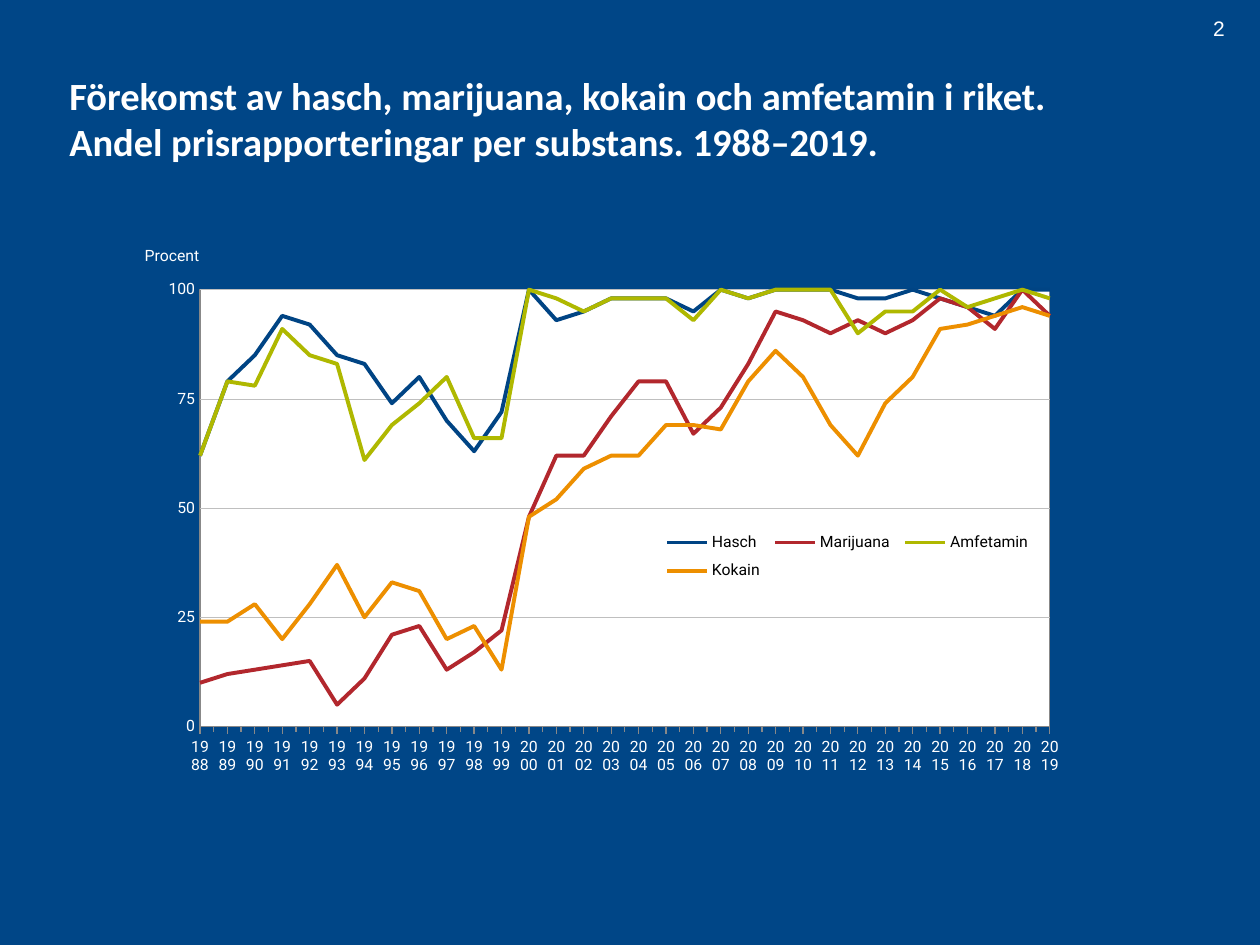
from lxml import etree
from pptx import Presentation
from pptx.chart.data import CategoryChartData
from pptx.dml.color import RGBColor
from pptx.enum.chart import XL_CHART_TYPE, XL_LEGEND_POSITION, XL_TICK_MARK
from pptx.enum.text import MSO_ANCHOR, MSO_AUTO_SIZE, PP_ALIGN
from pptx.oxml import parse_xml
from pptx.oxml.ns import nsdecls, qn
from pptx.util import Inches, Pt

LINE_CHART = XL_CHART_TYPE.LINE
LEGEND_RIGHT = XL_LEGEND_POSITION.RIGHT
TICK_OUTSIDE, TICK_NONE = XL_TICK_MARK.OUTSIDE, XL_TICK_MARK.NONE
ANCHOR_TOP, ANCHOR_MIDDLE = MSO_ANCHOR.TOP, MSO_ANCHOR.MIDDLE
ALIGN_LEFT = PP_ALIGN.LEFT
NO_AUTOSIZE = MSO_AUTO_SIZE.NONE

NAVY = RGBColor(0x00, 0x46, 0x87)
WHITE = RGBColor(0xFF, 0xFF, 0xFF)
BLACK = RGBColor(0x00, 0x00, 0x00)
AXIS_GREY = RGBColor(0x88, 0x88, 0x88)
GRID_GREY = RGBColor(0xBF, 0xBF, 0xBF)
BLUE = RGBColor(0x00, 0x44, 0x84)
RED = RGBColor(0xB2, 0x27, 0x2D)
LIME = RGBColor(0xAF, 0xB8, 0x00)
ORANGE = RGBColor(0xED, 0x8F, 0x00)

YEARS = [str(year) for year in range(1988, 2020)]
SUBSTANCES = [
    ("Hasch", BLUE, (62, 79, 85, 94, 92, 85, 83, 74, 80, 70, 63, 72, 100, 93, 95, 98,
                     98, 98, 95, 100, 98, 100, 100, 100, 98, 98, 100, 98, 96, 94, 100, 100)),
    ("Marijuana", RED, (10, 12, 13, 14, 15, 5, 11, 21, 23, 13, 17, 22, 48, 62, 62, 71,
                        79, 79, 67, 73, 83, 95, 93, 90, 93, 90, 93, 98, 96, 91, 100, 94)),
    ("Amfetamin", LIME, (62, 79, 78, 91, 85, 83, 61, 69, 74, 80, 66, 66, 100, 98, 95, 98,
                         98, 98, 93, 100, 98, 100, 100, 100, 90, 95, 95, 100, 96, 98, 100, 98)),
    ("Kokain", ORANGE, (24, 24, 28, 20, 28, 37, 25, 33, 31, 20, 23, 13, 48, 52, 59, 62,
                        62, 69, 69, 68, 79, 86, 80, 69, 62, 74, 80, 91, 92, 94, 96, 94)),
]


def format_font(font, size, color, name="Roboto", bold=False):
    font.name, font.size, font.bold = name, Pt(size), bold
    font.color.rgb = color


def write_text(frame, text, anchor=ANCHOR_TOP, **font_format):
    frame.word_wrap = True
    frame.auto_size = NO_AUTOSIZE
    frame.vertical_anchor = anchor
    paragraph = frame.paragraphs[0]
    paragraph.alignment = ALIGN_LEFT
    paragraph.text = text
    for run in paragraph.runs:
        format_font(run.font, **font_format)


def set_layout(element, position, before=None, inner=False):
    """Place a chart part by shares of the chart's size: x, y and maybe w, h."""
    for old_layout in element.findall(qn("c:layout")):
        element.remove(old_layout)
    layout = etree.Element(qn("c:layout"))
    manual = etree.SubElement(layout, qn("c:manualLayout"))
    settings = [("layoutTarget", "inner")] if inner else []
    settings += [("xMode", "edge"), ("yMode", "edge")]
    settings += zip("xywh", position)
    for tag, value in settings:
        etree.SubElement(manual, qn(f"c:{tag}")).set("val", str(value))
    following = element.find(qn(before)) if before else None
    if following is None:
        element.insert(0, layout)
    else:
        following.addprevious(layout)


class SlideBuilder:
    def __init__(self, presentation):
        self.width = presentation.slide_width
        self.height = presentation.slide_height
        self.slide = presentation.slides.add_slide(presentation.slide_layouts[5])
        self.slide.background.fill.solid()
        self.slide.background.fill.fore_color.rgb = NAVY

    def area(self, left, top, width, height):
        return (round(left * self.width), round(top * self.height),
                round(width * self.width), round(height * self.height))

    def title(self, text, *shares):
        shape = self.slide.shapes.title
        shape.left, shape.top, shape.width, shape.height = self.area(*shares)
        write_text(shape.text_frame, text, ANCHOR_MIDDLE,
                   size=22, color=WHITE, name="Calibri", bold=True)

    def label(self, text, *shares):
        shape = self.slide.shapes.add_textbox(*self.area(*shares))
        write_text(shape.text_frame, text, size=12, color=WHITE, name="Arial")

    def line_chart(self, categories, series_list, *shares):
        data = CategoryChartData(number_format="0")
        data.categories = categories
        for name, _, values in series_list:
            data.add_series(name, values)
        chart = self.slide.shapes.add_chart(LINE_CHART, *self.area(*shares), data).chart
        chart.has_title = False
        format_font(chart.font, 8, BLACK, "Arial")
        for series, (_, color, _) in zip(chart.plots[0].series, series_list):
            series.smooth = False
            line = series.format.line
            line.width = Pt(2.25)
            line.color.rgb = color
        self.style_axes(chart)
        self.style_plot_area(chart)
        self.style_legend(chart)

    def style_axes(self, chart):
        years, percent = chart.category_axis, chart.value_axis
        for axis in (years, percent):
            format_font(axis.tick_labels.font, 9, WHITE)
        years.major_tick_mark = years.minor_tick_mark = TICK_OUTSIDE
        years.format.line.color.rgb = AXIS_GREY
        years.format.line.width = Pt(0.75)
        years._element.find(qn("c:txPr")).find(qn("a:bodyPr")).set("rot", "0")

        percent.minimum_scale, percent.maximum_scale, percent.major_unit = 0, 100, 25
        percent.major_tick_mark = percent.minor_tick_mark = TICK_NONE
        percent.tick_labels.number_format = "0"
        percent.tick_labels.number_format_is_linked = False
        percent.format.line.fill.background()
        grid_line = percent.major_gridlines.format.line
        grid_line.color.rgb = GRID_GREY
        grid_line.width = Pt(0.25)

        # Horizontal axis title above the scale
        frame = percent.axis_title.text_frame
        frame.text = "Procent"
        format_font(frame.paragraphs[0].runs[0].font, 9, WHITE)
        title = percent.axis_title._element
        body = next(title.iter(qn("a:bodyPr")))
        body.set("rot", "0")
        body.set("vert", "horz")
        set_layout(title, (0.01, 0.05), before="c:overlay")

        # Lines start on the axis instead of half a category in
        crossing = percent._element.find(qn("c:crossBetween"))
        if crossing is None:
            crossing = etree.Element(qn("c:crossBetween"))
            percent._element.find(qn("c:crosses")).addnext(crossing)
        crossing.set("val", "midCat")

    def style_plot_area(self, chart):
        plot_area = next(chart._chartSpace.iter(qn("c:plotArea")))
        set_layout(plot_area, (0.071, 0.135, 0.891, 0.794), inner=True)
        plot_area.append(parse_xml(
            f'<c:spPr {nsdecls("c", "a")}>'
            f'<a:solidFill><a:srgbClr val="{WHITE}"/></a:solidFill>'
            f'<a:ln w="{Pt(0.75)}"><a:solidFill><a:srgbClr val="{AXIS_GREY}"/>'
            '</a:solidFill></a:ln></c:spPr>'))

    def style_legend(self, chart):
        chart.has_legend = True
        legend = chart.legend
        legend.position = LEGEND_RIGHT
        legend.include_in_layout = False
        format_font(legend.font, 9, BLACK)
        set_layout(legend._element, (0.55, 0.56, 0.4, 0.12), before="c:overlay")


def main():
    presentation = Presentation()
    presentation.slide_width, presentation.slide_height = Inches(10), Inches(7.5)
    builder = SlideBuilder(presentation)

    # Heading
    builder.title("Förekomst av hasch, marijuana, kokain och amfetamin i riket. \v"
                  "Andel prisrapporteringar per substans. 1988–2019.",
                  0.045, 0.06, 0.955, 0.13)
    # Share of price reports by substance and year
    builder.line_chart(YEARS, SUBSTANCES, 0.105, 0.228, 0.757, 0.592)
    # Page number
    builder.label("2", 0.953, 0.01, 0.047, 0.04)

    presentation.save("out.pptx")


if __name__ == "__main__":
    main()
